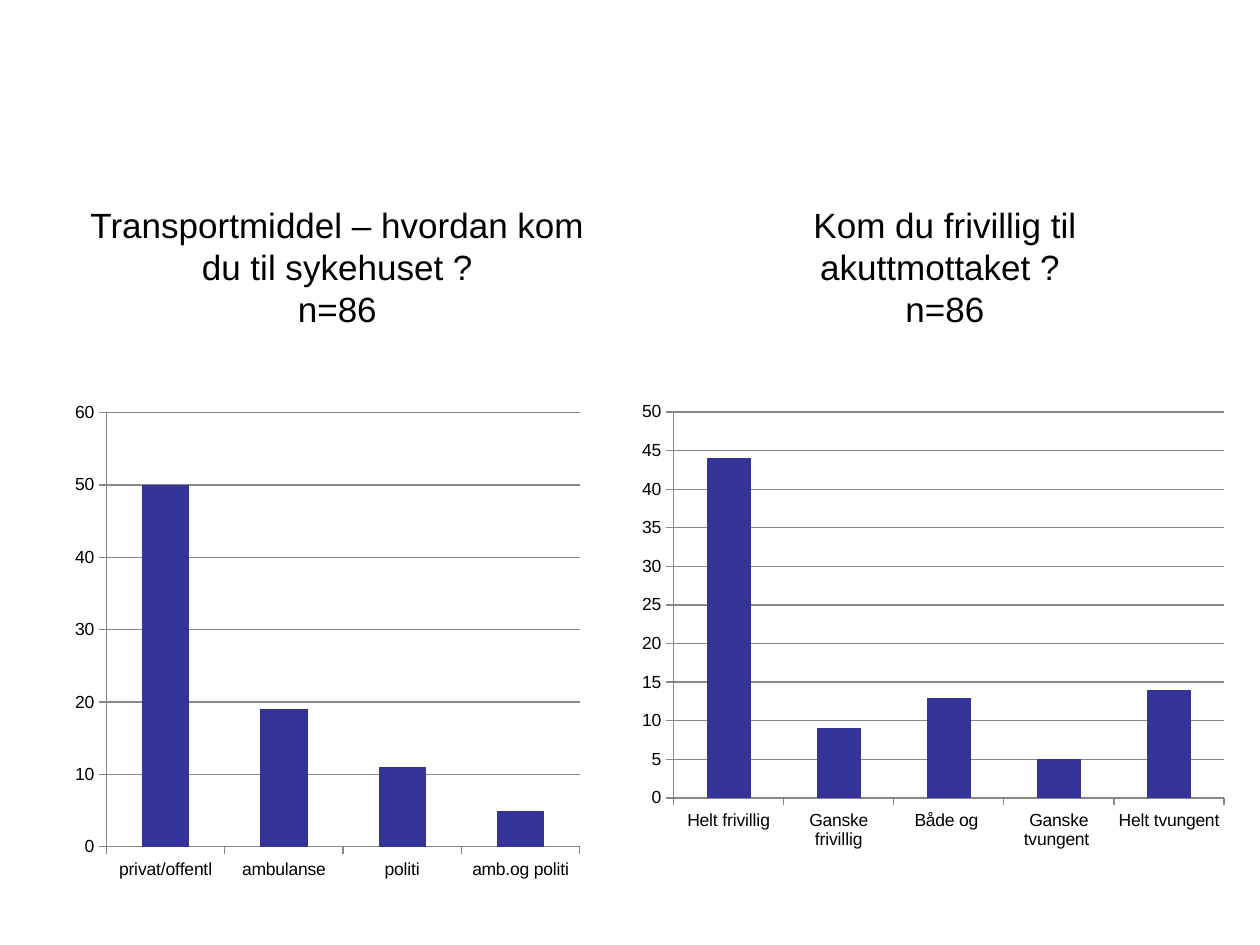
"""Build a slide with two column charts about arrival at hospital."""
from pptx import Presentation
from pptx.chart.data import CategoryChartData
from pptx.dml.color import RGBColor
from pptx.enum.chart import XL_CHART_TYPE, XL_TICK_MARK
from pptx.enum.text import MSO_ANCHOR, MSO_AUTO_SIZE, PP_ALIGN
from pptx.util import Cm, Pt

COLUMN = XL_CHART_TYPE.COLUMN_CLUSTERED
OUTSIDE = XL_TICK_MARK.OUTSIDE
NO_TICK = XL_TICK_MARK.NONE
TOP = MSO_ANCHOR.TOP
FIT_SHAPE = MSO_AUTO_SIZE.SHAPE_TO_FIT_TEXT
CENTER = PP_ALIGN.CENTER

BLACK = RGBColor(0, 0, 0)
INDIGO = RGBColor(0x33, 0x33, 0x99)
GRAY = RGBColor(0x87, 0x87, 0x87)

QUESTIONS = [
    {
        "heading": ["Transportmiddel – hvordan kom du til sykehuset ?", "n=86"],
        "heading_left": 1.5, "heading_width": 10.6,
        "answers": [("privat/offentl", 50), ("ambulanse", 19),
                    ("politi", 11), ("amb.og politi", 5)],
        "chart_left": 1.3, "chart_width": 10.6, "chart_height": 10,
        "maximum": 60, "step": 10,
    },
    {
        "heading": ["Kom du frivillig til akuttmottaket ? ", "n=86"],
        "heading_left": 14.5, "heading_width": 9.1,
        "answers": [("Helt frivillig", 44), ("Ganske frivillig", 9),
                    ("Både og ", 13), ("Ganske tvungent ", 5),
                    ("Helt tvungent", 14)],
        "chart_left": 12.7, "chart_width": 12.22, "chart_height": 9.4,
        "maximum": 50, "step": 5,
    },
]
HEADING_TOP, HEADING_HEIGHT, CHART_TOP = Cm(4.11), Cm(2.57), Cm(7.92)
FRAME_FORMAT = {"margin_left": 0, "margin_right": 0, "margin_top": 0,
                "margin_bottom": 0, "word_wrap": True,
                "vertical_anchor": TOP, "auto_size": FIT_SHAPE}


def set_format(target, values):
    for name, value in values.items():
        setattr(target, name, value)


def set_font(font, size):
    set_format(font, {"name": "Arial", "size": Pt(size), "bold": False})
    font.color.rgb = BLACK


def write_heading(shape, question):
    set_format(shape, {"left": Cm(question["heading_left"]), "top": HEADING_TOP,
                       "width": Cm(question["heading_width"]),
                       "height": HEADING_HEIGHT})
    set_format(shape.text_frame, FRAME_FORMAT)
    paragraph = shape.text_frame.paragraphs[0]
    paragraph.alignment = CENTER
    for index, line in enumerate(question["heading"]):
        if index:
            paragraph.add_line_break()
        run = paragraph.add_run()
        run.text = line
        set_font(run.font, 20)


def add_answer_chart(slide, question):
    categories, values = zip(*question["answers"])
    data = CategoryChartData()
    data.categories = categories
    data.add_series("Series 1", values)
    chart = slide.shapes.add_chart(
        COLUMN, Cm(question["chart_left"]), CHART_TOP,
        Cm(question["chart_width"]), Cm(question["chart_height"]), data).chart
    set_format(chart, {"has_legend": False, "has_title": False})
    set_font(chart.font, 10)

    plot = chart.plots[0]
    set_format(plot, {"gap_width": 150, "vary_by_categories": False})
    fill = plot.series[0].format.fill
    fill.solid()
    fill.fore_color.rgb = INDIGO

    value_axis = chart.value_axis
    set_format(value_axis, {"minimum_scale": 0, "has_major_gridlines": True,
                            "maximum_scale": question["maximum"],
                            "major_unit": question["step"]})
    for axis in (chart.category_axis, value_axis):
        set_format(axis, {"major_tick_mark": OUTSIDE, "minor_tick_mark": NO_TICK})
    for part in (chart.category_axis, value_axis, value_axis.major_gridlines):
        part.format.line.color.rgb = GRAY
        part.format.line.width = Pt(0.75)


def main():
    presentation = Presentation()
    set_format(presentation, {"slide_width": Cm(25.4), "slide_height": Cm(19.05)})
    slide = presentation.slides.add_slide(presentation.slide_layouts[5])
    headings = [slide.shapes.title, slide.shapes.add_textbox(0, 0, 0, 0)]
    for heading, question in zip(headings, QUESTIONS):
        write_heading(heading, question)
        add_answer_chart(slide, question)
    presentation.save("out.pptx")


if __name__ == "__main__":
    main()
